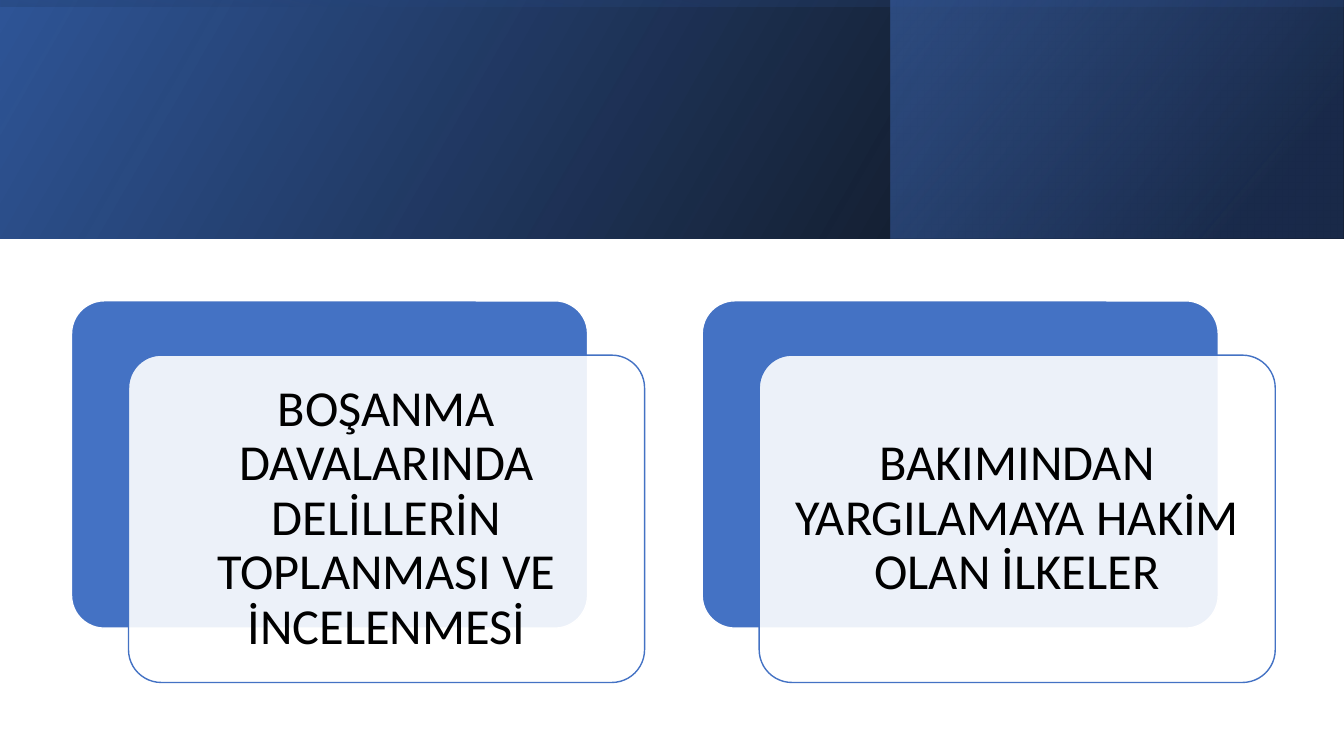
"""Build a slide with a gradient banner above two layered topic cards."""
from dataclasses import dataclass

from lxml.etree import SubElement
from pptx import Presentation
from pptx.dml.color import RGBColor as Rgb
from pptx.enum.shapes import MSO_SHAPE as Preset
from pptx.enum.text import MSO_ANCHOR as Anchor, PP_ALIGN as Align
from pptx.oxml.ns import qn
from pptx.shapes.autoshape import Shape
from pptx.slide import Slide
from pptx.util import Pt


@dataclass(frozen=True)
class Theme:
    black: str = "000000"
    white: str = "FFFFFF"
    accent: str = "4472C4"
    deep: str = "2F5597"
    navy: str = "203864"
    font: str = "Calibri"
    topic_size: float = 36
    outline: float = 1


@dataclass(frozen=True)
class Stop:
    position: float
    color: str
    opacity: int


@dataclass(frozen=True)
class Band:
    left: float
    top: float
    width: float
    height: float
    angle: float
    stops: tuple[Stop, Stop]
    rotation: float = 0


THEME = Theme()
SLIDE_W, SLIDE_H = 960, 540
BANNER_H = 170.64
SIDE_LEFT = 636.5
CARD_LEFT, CARD_TOP, CARD_STEP = 51.1, 214.9, 450.5
CARD_W, CARD_H, CARD_RADIUS = 368.6, 233.8, 0.1
SHIFT_X, SHIFT_Y = 40.7, 38.8
TEXT_INSET = 10.8

BANDS = (
    Band(0, 0, SLIDE_W, BANNER_H, 30,
         (Stop(0, THEME.black, 96), Stop(1, THEME.deep, 100))),
    Band(SIDE_LEFT, 0, SLIDE_W - SIDE_LEFT, BANNER_H, 40,
         (Stop(0.19, THEME.navy, 68), Stop(1, THEME.accent, 48))),
    Band((SLIDE_W - BANNER_H) / 2, (BANNER_H - SLIDE_W) / 2, BANNER_H, SLIDE_W, 10,
         (Stop(0.23, THEME.deep, 16), Stop(0.99, THEME.black, 45)), 270),
)
TOPICS = (
    "BOŞANMA DAVALARINDA DELİLLERİN TOPLANMASI VE İNCELENMESİ",
    "BAKIMINDAN YARGILAMAYA HAKİM OLAN İLKELER",
)


def set_opacities(shape: Shape, *opacities: int) -> None:
    """Apply opacity percentages to the fill colours in order."""
    fill = shape.fill._xPr.find(qn("a:gradFill"))
    if fill is None:
        fill = shape.fill._xPr.find(qn("a:solidFill"))
    for color, opacity in zip(fill.iter(qn("a:srgbClr")), opacities):
        SubElement(color, qn("a:alpha")).set("val", str(opacity * 1000))


def draw_band(slide: Slide, band: Band) -> None:
    """Draw one mirrored gradient layer of the banner."""
    layer = slide.shapes.add_shape(
        Preset.RECTANGLE, Pt(band.left), Pt(band.top), Pt(band.width), Pt(band.height))
    layer.shadow.inherit = False
    layer.line.fill.background()
    layer.rotation = band.rotation
    layer._element.spPr.xfrm.set("flipH", "1")
    layer.fill.gradient()
    layer.fill.gradient_angle = band.angle
    for gradient_stop, stop in zip(layer.fill.gradient_stops, band.stops):
        gradient_stop.position = stop.position
        gradient_stop.color.rgb = Rgb.from_string(stop.color)
    set_opacities(layer, *(stop.opacity for stop in band.stops))


def draw_panel(slide: Slide, left: float, top: float, fill: str, outline: str) -> Shape:
    """Draw one rounded panel of a card."""
    panel = slide.shapes.add_shape(
        Preset.ROUNDED_RECTANGLE, Pt(left), Pt(top), Pt(CARD_W), Pt(CARD_H))
    panel.adjustments[0] = CARD_RADIUS
    panel.shadow.inherit = False
    panel.fill.solid()
    panel.fill.fore_color.rgb = Rgb.from_string(fill)
    panel.line.color.rgb = Rgb.from_string(outline)
    panel.line.width = Pt(THEME.outline)
    return panel


def write_topic(panel: Shape, topic: str) -> None:
    """Write the centred topic on a panel."""
    frame = panel.text_frame
    frame.word_wrap = True
    frame.vertical_anchor = Anchor.MIDDLE
    frame.margin_left = frame.margin_right = Pt(TEXT_INSET)
    frame.margin_top = frame.margin_bottom = Pt(TEXT_INSET)
    paragraph = frame.paragraphs[0]
    paragraph.alignment = Align.CENTER
    paragraph.line_spacing = 0.9
    run = paragraph.add_run()
    run.text = topic
    run.font.name = THEME.font
    run.font.size = Pt(THEME.topic_size)
    run.font.color.rgb = Rgb.from_string(THEME.black)


def draw_card(slide: Slide, left: float, topic: str) -> None:
    """Draw a solid panel with a translucent topic panel shifted over it."""
    draw_panel(slide, left, CARD_TOP, THEME.accent, THEME.white)
    front = draw_panel(
        slide, left + SHIFT_X, CARD_TOP + SHIFT_Y, THEME.white, THEME.accent)
    set_opacities(front, 90)
    write_topic(front, topic)


def main() -> None:
    """Create and save the presentation."""
    deck = Presentation()
    deck.slide_width, deck.slide_height = Pt(SLIDE_W), Pt(SLIDE_H)
    slide = deck.slides.add_slide(deck.slide_layouts.get_by_name("Blank"))
    for band in BANDS:
        draw_band(slide, band)
    for column, topic in enumerate(TOPICS):
        draw_card(slide, CARD_LEFT + column * CARD_STEP, topic)
    deck.save("out.pptx")


if __name__ == "__main__":
    main()
